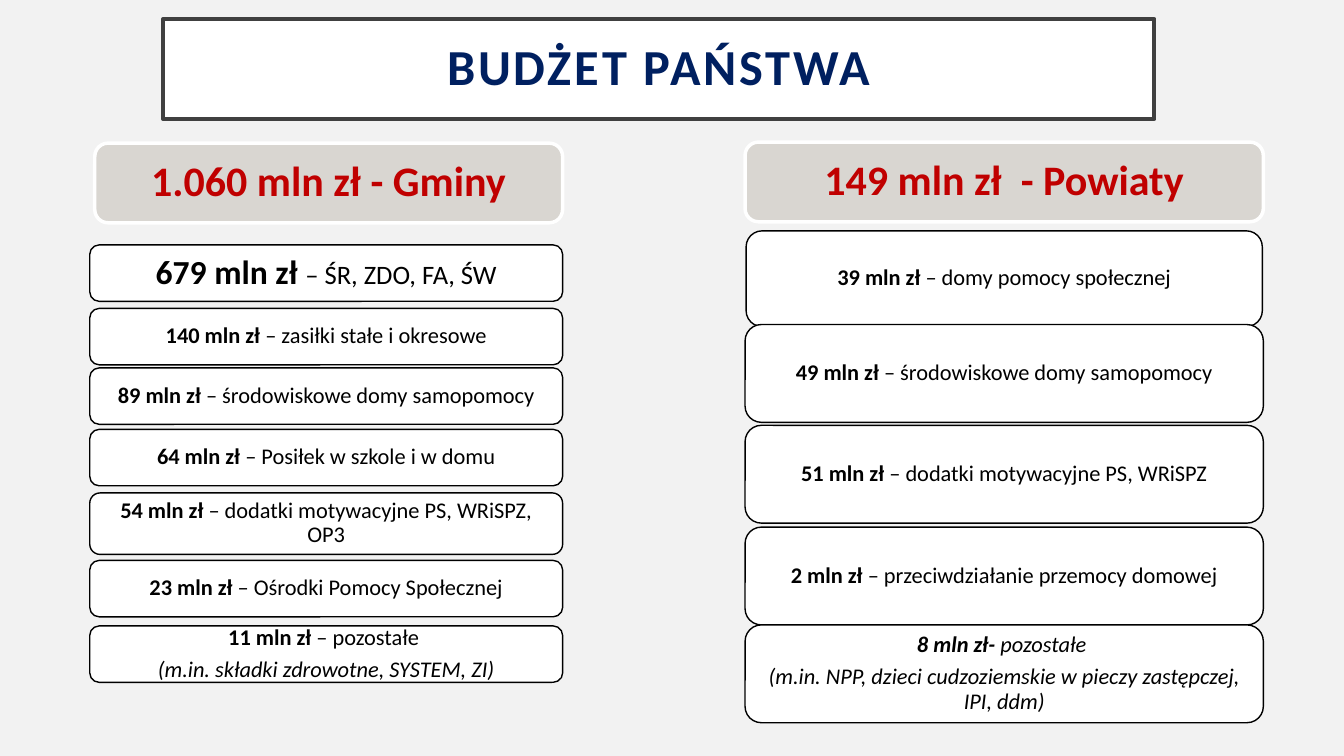
from pptx import Presentation
from pptx.dml.color import RGBColor
from pptx.enum.shapes import MSO_SHAPE as Shape
from pptx.enum.text import MSO_ANCHOR as Anchor, PP_ALIGN as Align
from pptx.util import Inches, Pt

# Content
COLORS = {
    "background": "F2F2F2", "white": "FFFFFF", "frame": "404040",
    "navy": "002060", "header": "D9D6D1", "red": "C00000", "black": "000000",
}
BOLD = {"bold": True}
PLAIN = {"bold": False}
ITALIC = {"italic": True}
BOLD_ITALIC = {"bold": True, "italic": True}

TITLE = "BUDŻET PAŃSTWA"
TITLE_BOX = (1.62, 0.19, 9.83, 0.99)
HEADERS = [
    ("1.060 mln zł - Gminy", (0.94, 1.42, 4.64, 0.79)),
    ("149 mln zł  - Powiaty", (7.39, 1.41, 5.14, 0.79)),
]
# Each item: top, paragraphs of (text, format) runs, exceptions to the column
COLUMNS = [
    {"left": 0.89, "width": 4.69, "height": 0.56, "items": [
        (2.43, [[("679 mln zł ", {"bold": True, "size": Pt(24)}),
                 ("– ŚR, ZDO, FA, ŚW", {"size": Pt(19)})]], {"inset": 0.1}),
        (3.06, [[("140 mln zł ", BOLD), ("– zasiłki stałe i okresowe", PLAIN)]], {}),
        (3.65, [[("89 mln zł ", BOLD), ("– środowiskowe domy samopomocy", PLAIN)]], {}),
        (4.26, [[("64 mln zł ", BOLD), ("– Posiłek w szkole i w domu", PLAIN)]], {}),
        (4.89, [[("54 mln zł ", BOLD),
                 ("– dodatki motywacyjne PS, WRiSPZ, OP3", PLAIN)]], {"height": 0.61}),
        (5.56, [[("23 mln zł ", BOLD), ("– Ośrodki Pomocy Społecznej", PLAIN)]], {}),
        (6.21, [[("11 mln zł ", BOLD), ("– pozostałe ", PLAIN)],
                [("(m.in. składki zdrowotne, SYSTEM, ZI)", ITALIC)]], {}),
    ]},
    {"left": 7.39, "width": 5.14, "height": 0.97, "items": [
        (2.29, [[("39 mln zł ", BOLD), ("– domy pomocy społecznej", PLAIN)]],
         {"left": 7.4, "width": 5.12, "height": 0.95}),
        (3.22, [[("49 mln zł ", BOLD), ("– środowiskowe domy samopomocy", PLAIN)]], {}),
        (4.22, [[("51 mln zł ", BOLD), ("– dodatki motywacyjne PS, WRiSPZ", PLAIN)]], {}),
        (5.23, [[("2 mln zł ", BOLD), ("– przeciwdziałanie przemocy domowej", PLAIN)]], {}),
        (6.2, [[("8 mln zł- ", BOLD_ITALIC), ("pozostałe ", ITALIC)],
               [("(m.in. NPP, dzieci cudzoziemskie w pieczy zastępczej, IPI, ddm)",
                 ITALIC)]], {}),
    ]},
]


def rgb(name):
    return RGBColor.from_string(COLORS[name])


def add_box(slide, kind, box, fill, line, line_width, insets, paragraphs, color, size):
    """Add a filled box with centred text and return its shape."""
    shape = slide.shapes.add_shape(kind, *(Inches(value) for value in box))
    shape.shadow.inherit = False
    shape.fill.solid()
    shape.fill.fore_color.rgb = rgb(fill)
    shape.line.color.rgb = rgb(line)
    shape.line.width = Pt(line_width)

    horizontal, vertical = (Inches(value) for value in insets)
    frame = shape.text_frame
    frame_format = {
        "word_wrap": True, "vertical_anchor": Anchor.MIDDLE,
        "margin_left": horizontal, "margin_right": horizontal,
        "margin_top": vertical, "margin_bottom": vertical,
    }
    for name, value in frame_format.items():
        setattr(frame, name, value)

    for index, runs in enumerate(paragraphs):
        paragraph = frame.add_paragraph() if index else frame.paragraphs[0]
        paragraph.alignment = Align.CENTER
        paragraph.line_spacing = 0.9
        if index < len(paragraphs) - 1:
            paragraph.space_after = Pt(0.35 * size)
        for text, run_format in runs:
            run = paragraph.add_run()
            run.text = text
            run.font.color.rgb = rgb(color)
            font_format = {"name": "Calibri", "size": Pt(size), **run_format}
            for name, value in font_format.items():
                setattr(run.font, name, value)
    return shape


def main():
    presentation = Presentation()
    presentation.slide_width = Inches(13.33)
    presentation.slide_height = Inches(7.5)
    slide = presentation.slides.add_slide(presentation.slide_layouts[6])
    slide.background.fill.solid()
    slide.background.fill.fore_color.rgb = rgb("background")

    # Title with letter spacing of 2 points
    title = add_box(slide, Shape.RECTANGLE, TITLE_BOX, "white", "frame", 3,
                    (0.3, 0.2), [[(TITLE, BOLD)]], "navy", 36)
    title_run = title.text_frame.paragraphs[0].runs[0]
    title_run._r.get_or_add_rPr().set("spc", "200")

    # Column headers
    for text, box in HEADERS:
        add_box(slide, Shape.ROUNDED_RECTANGLE, box, "header", "white", 2.5,
                (0.12, 0.12), [[(text, BOLD)]], "red", 30)

    # Budget items
    for column in COLUMNS:
        for top, paragraphs, exceptions in column["items"]:
            place = {"inset": 0.07, **column, **exceptions}
            box = (place["left"], top, place["width"], place["height"])
            add_box(slide, Shape.ROUNDED_RECTANGLE, box, "white", "black", 1,
                    (place["inset"], place["inset"]), paragraphs, "black", 16)

    presentation.save("out.pptx")


if __name__ == "__main__":
    main()
